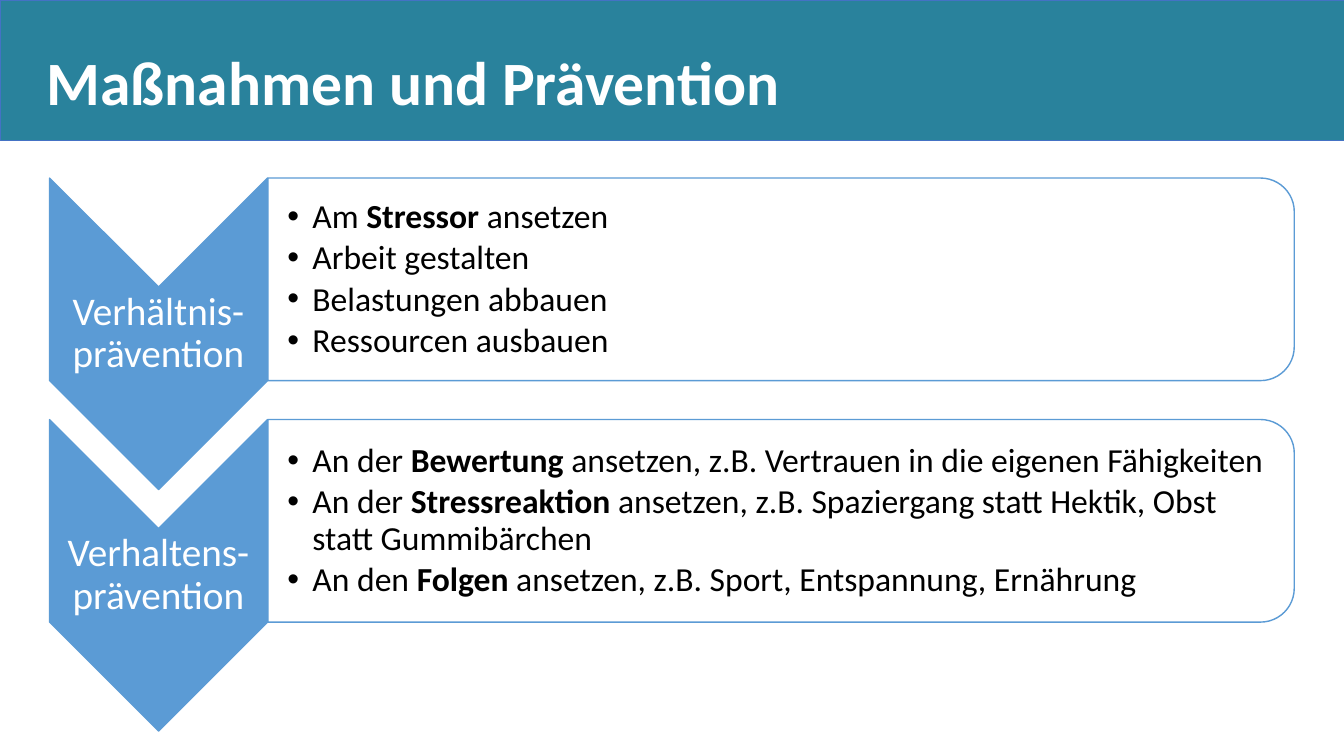
from lxml.etree import SubElement
from pptx import Presentation
from pptx.dml.color import RGBColor
from pptx.enum.shapes import MSO_SHAPE
from pptx.enum.text import MSO_ANCHOR, MSO_AUTO_SIZE, PP_ALIGN
from pptx.oxml.ns import qn
from pptx.util import Pt

TEAL, BLUE, EDGE, WHITE, BLACK = "29829C", "5B9BD5", "4472C4", "FFFFFF", "000000"
STEP = 172.5
SECTIONS = [
    ("Verhältnis-\vprävention", [
        ("Am ", "Stressor", " ansetzen"),
        ("Arbeit gestalten",),
        ("Belastungen abbauen",),
        ("Ressourcen ausbauen",),
    ]),
    ("Verhaltens-prävention", [
        ("An der ", "Bewertung", " ansetzen, z.B. Vertrauen in die eigenen Fähigkeiten"),
        ("An der ", "Stressreaktion",
         " ansetzen, z.B. Spaziergang statt Hektik, Obst statt Gummibärchen"),
        ("An den ", "Folgen", " ansetzen, z.B. Sport, Entspannung, Ernährung"),
    ]),
]


def rgb(value):
    return RGBColor.from_string(value)


def apply(target, values):
    for name, value in values.items():
        setattr(target, name, value)


class Deck:
    font = "Calibri"

    def __init__(self, s):
        self.s = s

    def place(self, sp, box):
        apply(sp, dict(zip(("left", "top", "width", "height"), map(Pt, box))))

    def style(self, r, size, color, bold=False):
        apply(r.font, {"name": self.font, "size": Pt(size), "bold": bold})
        r.font.color.rgb = rgb(color)

    def shape(self, kind, box, fill, line, width=1, rotation=0, alpha=None):
        sp = self.s.shapes.add_shape(kind, *map(Pt, box))
        sp.rotation = rotation
        sp.shadow.inherit = False
        sp.fill.solid()
        sp.fill.fore_color.rgb = rgb(fill)
        sp.line.color.rgb = rgb(line)
        sp.line.width = Pt(width)
        if alpha:
            clr = sp.element.spPr.find(qn("a:solidFill")).find(qn("a:srgbClr"))
            SubElement(clr, qn("a:alpha"), val=str(alpha * 1000))
        return sp

    def title(self, text, box, behind):
        sp = self.s.shapes.title
        behind.element.addnext(sp.element)
        self.place(sp, box)
        tf = sp.text_frame
        apply(tf, {"text": text, "word_wrap": False, "vertical_anchor": MSO_ANCHOR.TOP,
                   "auto_size": MSO_AUTO_SIZE.SHAPE_TO_FIT_TEXT})
        p = tf.paragraphs[0]
        p.alignment = PP_ALIGN.LEFT
        self.style(p.runs[0], 44, WHITE, True)

    def text_frame(self, box, inset):
        tf = self.s.shapes.add_textbox(*map(Pt, box)).text_frame
        apply(tf, {"word_wrap": True, "vertical_anchor": MSO_ANCHOR.MIDDLE,
                   "margin_left": Pt(inset), "margin_right": Pt(1.4),
                   "margin_top": Pt(1.4), "margin_bottom": Pt(1.4)})
        return tf

    def label(self, text, box):
        p = self.text_frame(box, 1.4).paragraphs[0]
        apply(p, {"text": text, "alignment": PP_ALIGN.CENTER, "line_spacing": 0.9})
        for r in p.runs:
            self.style(r, 28, WHITE)

    def bullets(self, items, box):
        tf = self.text_frame(box, 13.7)
        for i, parts in enumerate(items):
            p = tf.add_paragraph() if i else tf.paragraphs[0]
            apply(p, {"line_spacing": 0.9, "space_after": Pt(3.6)})
            pPr = p._p.get_or_add_pPr()
            pPr.set("marL", str(Pt(18)))
            pPr.set("indent", str(-Pt(18)))
            SubElement(pPr, qn("a:buFont"), typeface="Arial")
            SubElement(pPr, qn("a:buChar"), char="•")
            for j, part in enumerate(parts):
                r = p.add_run()
                r.text = part
                self.style(r, 24, BLACK, j == 1)


def main():
    prs = Presentation()
    prs.slide_width, prs.slide_height = Pt(960), Pt(540)
    deck = Deck(prs.slides.add_slide(prs.slide_layouts[5]))
    banner = deck.shape(MSO_SHAPE.RECTANGLE, (0, 0, 960, 100.5), TEAL, EDGE, 0.5)
    deck.title("Maßnahmen und Prävention", (26, 27.4, 543.6, 60.5), banner)
    for i, (name, items) in enumerate(SECTIONS):
        y = i * STEP
        deck.shape(MSO_SHAPE.CHEVRON, (2, 160.6 + y, 222.5, 155.7), BLUE, BLUE, rotation=90)
        deck.label(name, (35.3, 205 + y, 155.7, 67))
        deck.shape(MSO_SHAPE.ROUND_2_SAME_RECTANGLE, (485.6, -167 + y, 144.7, 733),
                   WHITE, BLUE, rotation=90, alpha=90)
        deck.bullets(items, (191.5, 134.6 + y, 726.5, 130.3))
    prs.save("out.pptx")


if __name__ == "__main__":
    main()
